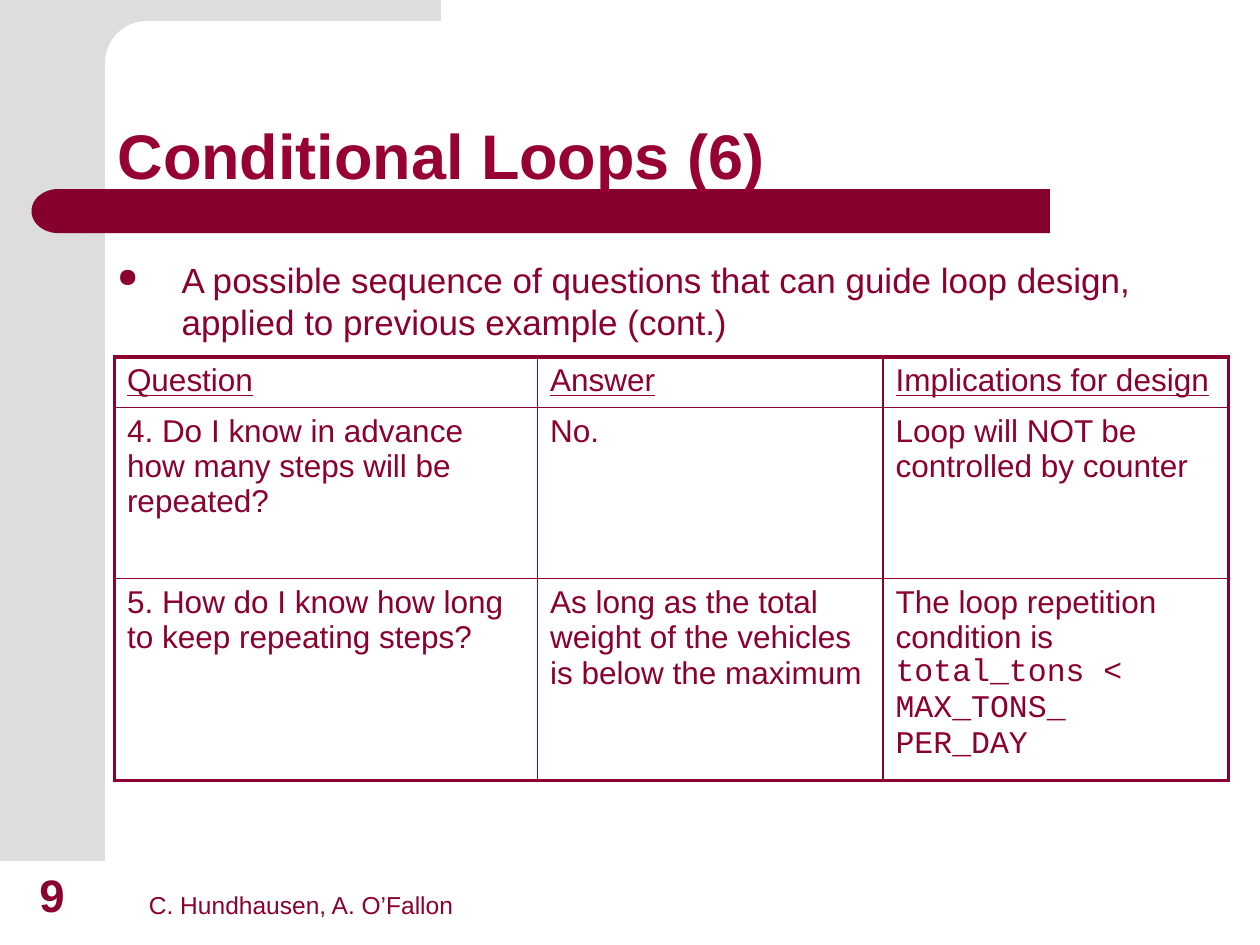
from math import cos, pi, sin
from typing import NamedTuple

from lxml.etree import SubElement
from pptx import Presentation
from pptx.dml.color import RGBColor
from pptx.enum.shapes import MSO_SHAPE
from pptx.enum.text import MSO_ANCHOR, PP_ALIGN
from pptx.oxml import parse_xml
from pptx.oxml.ns import nsdecls, qn
from pptx.util import Emu, Inches, Pt

COLORS = {"panel": "DDDDDD", "bar": "86002D", "text": "8A002E", "title": "960032"}
SLIDE_COLUMNS, SLIDE_ROWS = 120, 90
UNIT = Inches(10) // SLIDE_COLUMNS
THIN, THICK = 1, 2.25


class Box(NamedTuple):
    """Left, top, width and height in grid units."""
    left: float
    top: float
    width: float
    height: float

    def emu(self) -> list[Emu]:
        return [grid(units) for units in self]


class Label(NamedTuple):
    box: Box
    text: str
    size: int
    bold: bool
    align: PP_ALIGN


def grid(units: float) -> Emu:
    return Emu(round(units * UNIT))


def rgb(name: str) -> RGBColor:
    return RGBColor.from_string(COLORS[name])


def style_font(font, size: float, color: str = "text", bold: bool = False) -> None:
    font.name = "Arial"
    font.size = Pt(size)
    font.bold = bold
    font.color.rgb = rgb(color)


def paint(shape, color: str) -> None:
    shape.shadow.inherit = False
    shape.fill.solid()
    shape.fill.fore_color.rgb = rgb(color)
    shape.line.fill.background()


def add_block(slide, kind: MSO_SHAPE, box: Box, color: str, rotation: int = 0) -> None:
    block = slide.shapes.add_shape(kind, *box.emu())
    block.rotation = rotation
    paint(block, color)


def add_corner(slide) -> None:
    """Top strip that meets the side panel in a rounded inner corner."""
    radius, steps = 4, 16
    center_x, center_y = 14, 6
    curve = []
    for step in range(steps + 1):
        angle = pi / 2 * step / steps
        curve.append((center_x - radius * sin(angle), center_y - radius * cos(angle)))
    outline = [(42, 2), *curve, (6, 6), (6, 0)]
    builder = slide.shapes.build_freeform(grid(42), 0)
    builder.add_line_segments([(grid(x), grid(y)) for x, y in outline], close=True)
    paint(builder.convert_to_shape(), "panel")


def add_label(slide, label: Label) -> None:
    frame = slide.shapes.add_textbox(*label.box.emu()).text_frame
    frame.word_wrap = True
    frame.vertical_anchor = MSO_ANCHOR.BOTTOM
    paragraph = frame.paragraphs[0]
    paragraph.text = label.text
    paragraph.alignment = label.align
    style_font(paragraph.font, label.size, bold=label.bold)


def place_title(slide, text: str, box: Box) -> None:
    title = slide.shapes.title
    slide.shapes.element.append(title.element)  # in front of the bar
    title.left, title.top, title.width, title.height = box.emu()
    frame = title.text_frame
    frame.vertical_anchor = MSO_ANCHOR.BOTTOM
    paragraph = frame.paragraphs[0]
    paragraph.text = text
    paragraph.alignment = PP_ALIGN.LEFT
    paragraph.line_spacing = 0.9
    style_font(paragraph.font, 36, "title", bold=True)


def add_bullet(slide, text: str, box: Box) -> None:
    frame = slide.shapes.add_textbox(*box.emu()).text_frame
    frame.word_wrap = True
    paragraph = frame.paragraphs[0]
    paragraph.text = text
    properties = paragraph._p.get_or_add_pPr()
    indent = Inches(0.51)
    properties.set("marL", str(indent))
    properties.set("indent", str(-indent))
    color = SubElement(properties, qn("a:buClr"))
    SubElement(color, qn("a:srgbClr"), val=COLORS["text"])
    SubElement(properties, qn("a:buSzPct"), val="75000")
    SubElement(properties, qn("a:buChar"), char="●")
    style_font(paragraph.font, 20)


def set_borders(cell, widths: dict[str, float]) -> None:
    properties = cell._tc.get_or_add_tcPr()
    for side, width in widths.items():
        properties.append(parse_xml(
            f'<a:ln{side} {nsdecls("a")} w="{Pt(width)}"><a:solidFill>'
            f'<a:srgbClr val="{COLORS["text"]}"/></a:solidFill></a:ln{side}>'))
    cell.fill.background()


def add_code(paragraph, lines: list[str]) -> None:
    for line in lines:
        paragraph.add_line_break()
        run = paragraph.add_run()
        run.text = line
        run.font.name = "Courier New"


def add_question_table(slide, box: Box, columns: list[float], heights: list[float],
                       rows: list[list[str]], code: list[str]) -> None:
    table = slide.shapes.add_table(len(rows), len(columns), *box.emu()).table
    table.first_row = table.horz_banding = False
    for column, width in zip(table.columns, columns):
        column.width = grid(width)
    for row, height in zip(table.rows, heights):
        row.height = grid(height)
    last_row, last_column = len(rows) - 1, len(columns) - 1
    for r, texts in enumerate(rows):
        for c, text in enumerate(texts):
            cell = table.cell(r, c)
            outer = {"L": c == 0, "R": c == last_column, "T": r == 0, "B": r == last_row}
            set_borders(cell, {side: THICK if edge else THIN for side, edge in outer.items()})
            paragraph = cell.text_frame.paragraphs[0]
            paragraph.text = text
            style_font(paragraph.font, 18)
            paragraph.font.underline = r == 0
    add_code(table.cell(last_row, last_column).text_frame.paragraphs[0], code)


def main() -> None:
    presentation = Presentation()
    presentation.slide_width = grid(SLIDE_COLUMNS)
    presentation.slide_height = grid(SLIDE_ROWS)
    slide = presentation.slides.add_slide(presentation.slide_layouts[5])

    add_block(slide, MSO_SHAPE.RECTANGLE, Box(0, 0, 10, 82), "panel")
    add_corner(slide)
    add_block(slide, MSO_SHAPE.RECTANGLE, Box(8, 18, 92, 4.2), "bar")
    add_block(slide, MSO_SHAPE.FLOWCHART_DELAY, Box(3, 18, 5.1, 4.2), "bar", rotation=180)

    for label in (
        Label(Box(13, 82, 45, 6.2), "C. Hundhausen, A. O’Fallon", 14, False, PP_ALIGN.LEFT),
        Label(Box(1.1, 82, 7.7, 6.4), "9", 26, True, PP_ALIGN.CENTER),
    ):
        add_label(slide, label)

    place_title(slide, "Conditional Loops (6)", Box(10, 4, 104, 15))
    add_bullet(slide, "A possible sequence of questions that can guide loop design, "
                      "applied to previous example (cont.)", Box(10, 24, 101, 48.8))
    add_question_table(
        slide, Box(10.9, 34, 106.1, 40.3),
        columns=[40.3, 32.9, 32.9], heights=[4.8, 16.3, 19.2],
        rows=[
            ["Question", "Answer", "Implications for design"],
            ["4. Do I know in advance how many steps will be repeated?", "No.",
             "Loop will NOT be controlled by counter"],
            ["5. How do I know how long to keep repeating steps?",
             "As long as the total weight of the vehicles is below the maximum",
             "The loop repetition condition is "],
        ],
        code=["total_tons < MAX_TONS_", "PER_DAY"])

    presentation.save("out.pptx")


if __name__ == "__main__":
    main()
